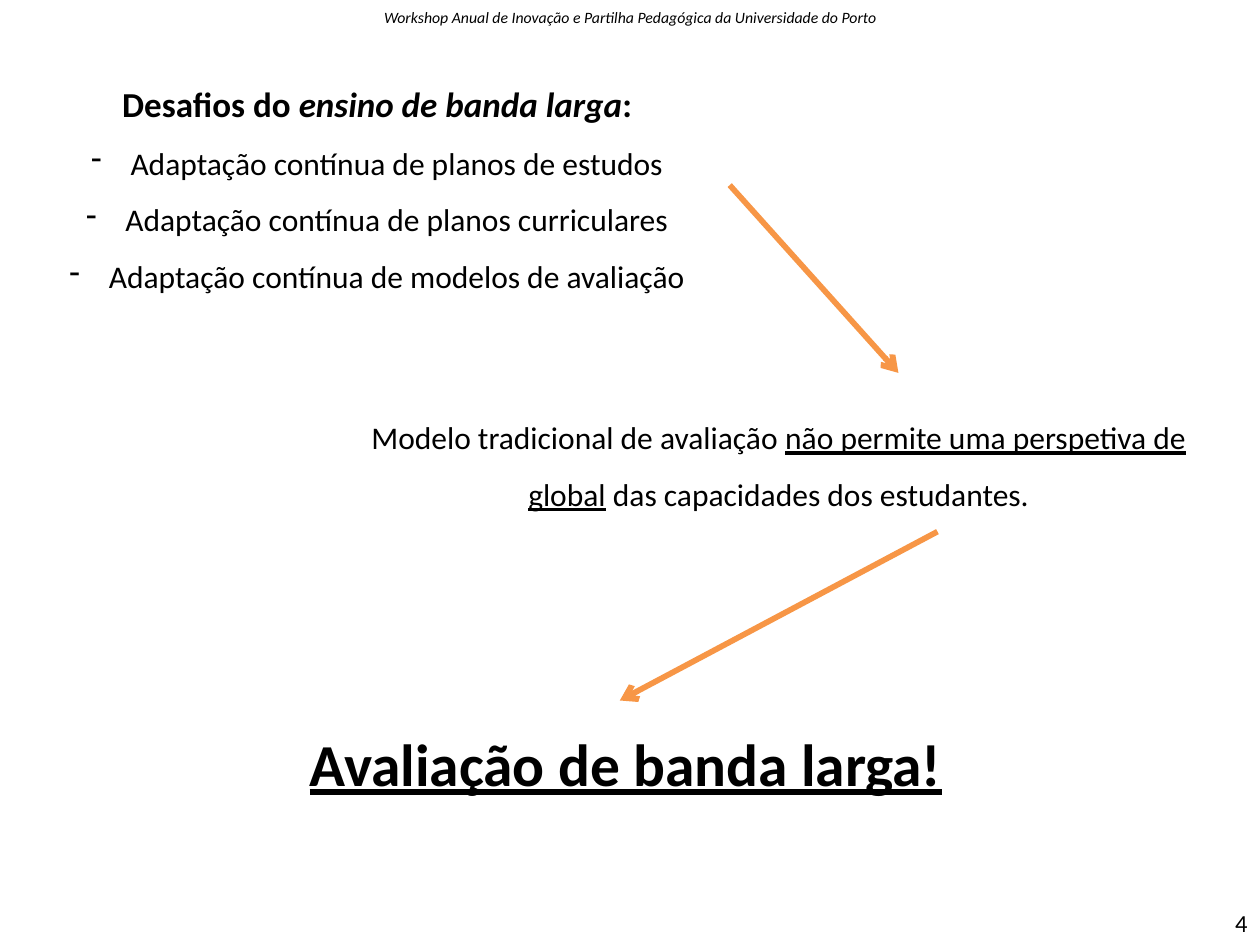
"""Build the slide on the challenges of broadband teaching and assessment."""
import pptx
import pptx.dml.color
import pptx.enum.shapes
import pptx.enum.text
import pptx.oxml.ns
import pptx.util
from lxml import etree

Pt = pptx.util.Pt
ALIGN = pptx.enum.text.PP_ALIGN


def color(hex_value):
    return pptx.dml.color.RGBColor.from_string(hex_value)


def add_element(parent, tag, **attributes):
    return etree.SubElement(parent, pptx.oxml.ns.qn(tag), attributes)


class SlideWriter:
    font_name = "Calibri"
    text_color = "000000"
    arrow_color = "F79646"
    arrow_width = 3.25
    bullet_indent = 22.5

    def __init__(self, slide):
        self.slide = slide

    def text(self, left, top, width, height, align=ALIGN.CENTER):
        frame = self.slide.shapes.add_textbox(Pt(left), Pt(top), Pt(width), Pt(height)).text_frame
        frame.word_wrap = True
        frame.paragraphs[0].alignment = align
        return frame

    def runs(self, paragraph, size, *parts):
        for words, formats in parts:
            run = paragraph.add_run()
            run.text = words
            run.font.color.rgb = color(self.text_color)
            for name, value in {"name": self.font_name, "size": Pt(size), **formats}.items():
                setattr(run.font, name, value)

    def bullet(self, frame, size, words):
        paragraph = frame.add_paragraph()
        paragraph.alignment = ALIGN.CENTER
        paragraph.line_spacing = 1.5
        properties = paragraph._p.get_or_add_pPr()
        indent = Pt(self.bullet_indent)
        properties.set("marL", str(indent))
        properties.set("indent", str(-indent))
        add_element(properties, "a:buFontTx")
        add_element(properties, "a:buChar", char="-")
        self.runs(paragraph, size, (words, {}))

    def arrow(self, *ends):
        connector = self.slide.shapes.add_connector(
            pptx.enum.shapes.MSO_CONNECTOR.STRAIGHT, *map(Pt, ends))
        connector.line.color.rgb = color(self.arrow_color)
        connector.line.width = Pt(self.arrow_width)
        add_element(connector.line._get_or_add_ln(), "a:tailEnd", type="arrow")
        add_element(connector._element.spPr, "a:effectLst")


def main():
    deck = pptx.Presentation()
    deck.slide_width, deck.slide_height = Pt(720), Pt(540)
    writer = SlideWriter(deck.slides.add_slide(deck.slide_layouts[6]))

    workshop = writer.text(0, 0.7, 720, 18)
    writer.runs(workshop.paragraphs[0], 9, (
        "Workshop Anual de Inovação e Partilha Pedagógica da Universidade do Porto",
        {"italic": True}))

    page_number = writer.text(552, 515.5, 168, 28.8, ALIGN.RIGHT)
    writer.runs(page_number.paragraphs[0], 14, ("4", {}))

    challenges = writer.text(20, 31.7, 391, 141.8)
    challenges.paragraphs[0].line_spacing = 1.5
    writer.runs(challenges.paragraphs[0], 20,
                ("Desafios do ", {"bold": True}),
                ("ensino de banda larga", {"bold": True, "italic": True}),
                (":", {"bold": True}))
    for subject in ("planos de estudos", "planos curriculares", "modelos de avaliação"):
        writer.bullet(challenges, 18, f"Adaptação contínua de {subject}")

    writer.arrow(417, 105.8, 513.4, 213.1)
    writer.arrow(535.7, 303.8, 354.2, 400.3)

    limitation = writer.text(184.3, 224.6, 521.3, 72.7)
    limitation.paragraphs[0].line_spacing = 1.5
    writer.runs(limitation.paragraphs[0], 18,
                ("Modelo tradicional de avaliação ", {}),
                ("não permite uma perspetiva de global", {"underline": True}),
                (" das capacidades dos estudantes.", {}))

    conclusion = writer.text(110.9, 411.8, 493.2, 48.2)
    writer.runs(conclusion.paragraphs[0], 34,
                ("Avaliação de banda larga!", {"bold": True, "underline": True}))

    deck.save("out.pptx")


if __name__ == "__main__":
    main()
